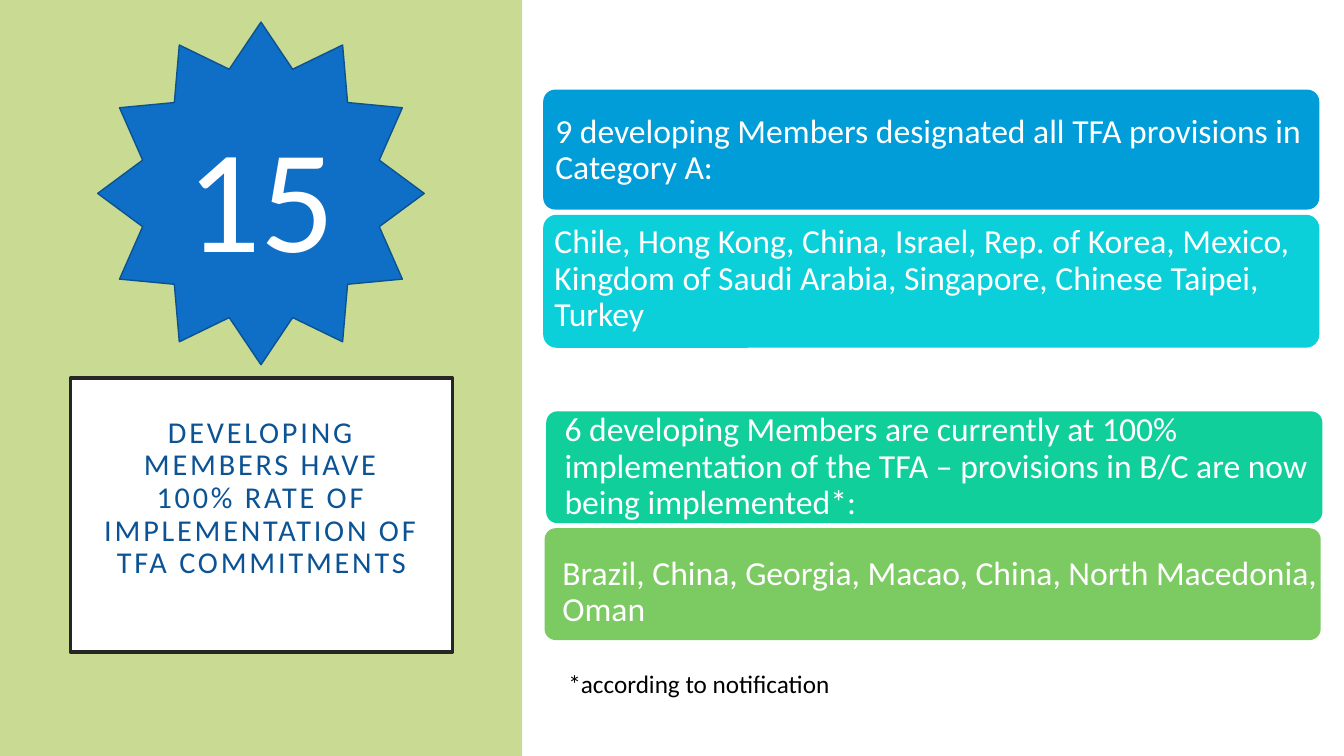
from pptx import Presentation
from pptx.dml.color import RGBColor
from pptx.enum.shapes import MSO_SHAPE as Kind
from pptx.enum.text import MSO_ANCHOR as Anchor, PP_ALIGN as Align
from pptx.util import Pt

WHITE = "FFFFFF"
BARS = [  # bar box, label box, fill, wording
    ((388, 64, 554.4, 85.7), (388, 61.2, 565.2, 92.9), "009DD9",
     "9 developing Members designated all TFA provisions in Category A:"),
    ((388, 153.4, 554.4, 95), (387.4, 152.6, 555.1, 93.6), "0BD0D9",
     "Chile, Hong Kong, China, Israel, Rep. of Korea, Mexico, "
     "Kingdom of Saudi Arabia, Singapore, Chinese Taipei, Turkey"),
    ((390.2, 293.8, 554.4, 79.9), (394.6, 287.3, 564.5, 92.9), "10CF9B",
     "6 developing Members are currently at 100% implementation of "
     "the TFA – provisions in B/C are now being implemented*:"),
    ((389, 377.3, 554.4, 79.9), (393.1, 376.6, 564.5, 92.9), "7CCA62",
     "Brazil, China, Georgia, Macao, China, North Macedonia, Oman"),
]


def color(code):
    return RGBColor.from_string(code)


def draw(slide, kind, box, fill, line=None, width=1):
    shape = slide.shapes.add_shape(kind, *map(Pt, box))
    shape.shadow.inherit = False
    shape.fill.solid()
    shape.fill.fore_color.rgb = color(fill)
    if line:
        shape.line.color.rgb = color(line)
        shape.line.width = Pt(width)
    else:
        shape.line.fill.background()
    return shape


def write(shape, text, size, ink, align=Align.LEFT, inset=None,
          anchor=Anchor.MIDDLE, wrap=True, space=None):
    """Fill a shape with one paragraph; inset is left, top, right, bottom."""
    frame = shape.text_frame
    frame.text = text
    frame.word_wrap = wrap
    frame.vertical_anchor = anchor
    if inset:
        (frame.margin_left, frame.margin_top,
         frame.margin_right, frame.margin_bottom) = map(Pt, inset)
    para = frame.paragraphs[0]
    para.alignment = align
    if space:
        para.line_spacing = space
    for run in para.runs:
        run.font.name = "Calibri"
        run.font.size = Pt(size)
        run.font.color.rgb = color(ink)
    return para


def side(slide, box):
    """Green panel with the star count above the framed title."""
    left, top, width, height = box
    draw(slide, Kind.RECTANGLE, box, "C9DA92")

    frame = draw(slide, Kind.RECTANGLE, (left + 50.4, top + 270, 272.9, 195.8),
                 WHITE, "262626", 2.5)
    title = write(frame, "DEVELOPING MEMBERS HAVE\v100% RATE OF "
                  "IMPLEMENTATION OF TFA COMMITMENTS", 21.6, "0B5394",
                  Align.CENTER, (14.4, 14.4, 14.4, 37.8), space=0.9)
    for run in title.runs:
        run.font._element.set("spc", "200")

    star = draw(slide, Kind.STAR_12_POINT, (left + 69.8, top + 15.8, 233.3, 244.8),
                "0F6FC6", "0B5292")
    write(star, "15", 105, WHITE, Align.CENTER, wrap=False)


def bar(slide, box, label, fill, text):
    shape = draw(slide, Kind.ROUNDED_RECTANGLE, box, fill)
    shape.adjustments[0] = 0.1
    area = slide.shapes.add_textbox(*map(Pt, label))
    write(area, text, 24, WHITE, inset=[8.64] * 4, space=0.9)


def note(slide, box):
    area = slide.shapes.add_textbox(*map(Pt, box))
    write(area, "*according to notification", 18, "000000",
          anchor=Anchor.TOP, wrap=False)


def main():
    deck = Presentation()
    deck.slide_width, deck.slide_height = Pt(960), Pt(540)
    slide = deck.slides.add_slide(deck.slide_layouts[6])
    side(slide, (0, 0, 373, 540))
    for item in BARS:
        bar(slide, *item)
    note(slide, (398.9, 473.8, 201.6, 28.8))
    deck.save("out.pptx")


if __name__ == "__main__":
    main()
